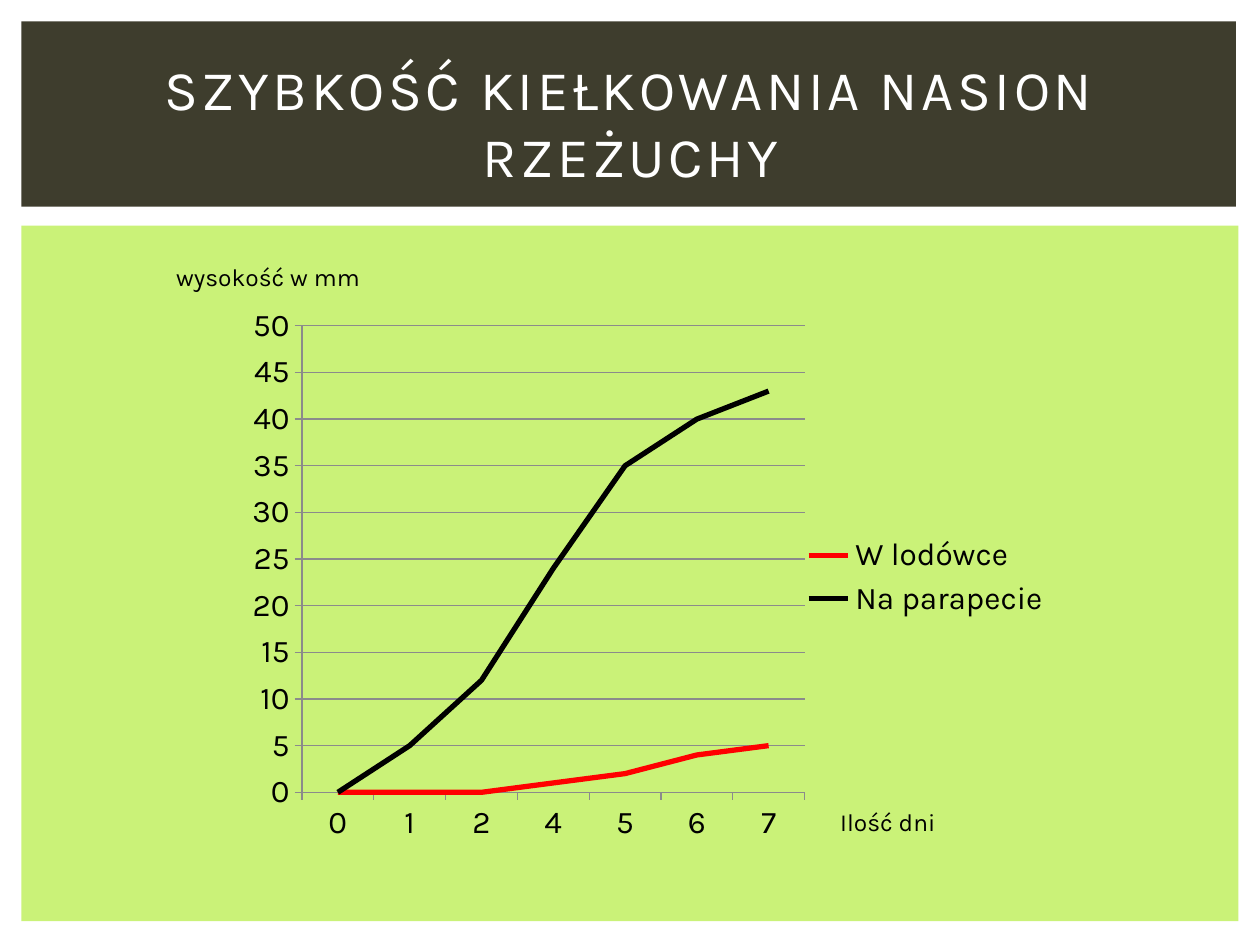
from dataclasses import dataclass

from lxml.etree import SubElement
from pptx import Presentation
from pptx.chart.data import CategoryChartData
from pptx.dml.color import RGBColor as RGB
from pptx.enum.chart import XL_CHART_TYPE as ChartType, XL_LEGEND_POSITION as LegendPos, XL_MARKER_STYLE as Marker
from pptx.enum.shapes import MSO_SHAPE as Shape
from pptx.enum.text import MSO_ANCHOR as Anchor, PP_ALIGN as Align
from pptx.oxml.ns import qn
from pptx.util import Inches, Pt


@dataclass(frozen=True)
class Theme:
    font: str = "Karla"
    ink: RGB = RGB(0, 0, 0)
    white: RGB = RGB(255, 255, 255)
    banner: RGB = RGB(0x3E, 0x3D, 0x2D)
    panel: RGB = RGB(0xCA, 0xF2, 0x78)
    grid: RGB = RGB(0x8B, 0x8B, 0x8B)
    red: RGB = RGB(255, 0, 0)
    title_size: int = 32
    chart_size: int = 18
    label_size: int = 14


@dataclass(frozen=True)
class Box:
    x: float
    y: float
    w: float
    h: float

    def inches(self) -> tuple:
        return tuple(Inches(v) for v in (self.x, self.y, self.w, self.h))


@dataclass(frozen=True)
class Panel:
    box: Box
    color: RGB


@dataclass(frozen=True)
class Label:
    text: str
    box: Box
    size: int
    color: RGB
    align: Align = Align.LEFT
    anchor: Anchor = Anchor.TOP
    spacing: int = 0
    wrap: bool = False


@dataclass(frozen=True)
class Growth:
    name: str
    heights: tuple
    color: RGB


T = Theme()
PANELS = (
    Panel(Box(0.17, 1.79, 9.66, 5.52), T.panel),
    Panel(Box(0.17, 0.17, 9.64, 1.47), T.banner),
)
TITLE = Label("SZYBKOŚĆ KIEŁKOWANIA NASION RZEŻUCHY", Box(0.42, 0.39, 9.17, 1.15),
              T.title_size, T.white, Align.CENTER, Anchor.MIDDLE, 200, True)
AXIS_LABELS = (
    Label("wysokość w mm", Box(1.3, 2.03, 1.73, 0.34), T.label_size, T.ink),
    Label("Ilość dni", Box(6.57, 6.36, 1.18, 0.34), T.label_size, T.ink),
)
DAYS = ("0", "1", "2", "4", "5", "6", "7")
SERIES = (
    Growth("W lodówce", (0, 0, 0, 1, 2, 4, 5), T.red),
    Growth("Na parapecie", (0, 5, 12, 24, 35, 40, 43), T.ink),
)
CHART_BOX = Box(1.77, 2.36, 6.67, 4.44)
PLOT = {"x": 0.094, "y": 0.051, "w": 0.598, "h": 0.834}


def add_panel(shapes, panel: Panel) -> None:
    sp = shapes.add_shape(Shape.RECTANGLE, *panel.box.inches())
    sp.shadow.inherit = False
    sp.fill.solid()
    sp.fill.fore_color.rgb = panel.color
    sp.line.fill.background()


def add_label(shapes, label: Label) -> None:
    tf = shapes.add_textbox(*label.box.inches()).text_frame
    tf.word_wrap = label.wrap
    tf.vertical_anchor = label.anchor
    p = tf.paragraphs[0]
    r = p.add_run()
    r.text = label.text
    p.alignment = label.align
    p.font.name = T.font
    p.font.size = Pt(label.size)
    p.font.color.rgb = label.color
    if label.spacing:
        r.font._element.set("spc", str(label.spacing))


def set_plot_layout(chart) -> None:
    area = chart._chartSpace.chart.plotArea
    for old in area.findall(qn("c:layout")):
        area.remove(old)
    layout = SubElement(area, qn("c:layout"))
    area.insert(0, layout)
    manual = SubElement(layout, qn("c:manualLayout"))
    settings = {"layoutTarget": "inner", "xMode": "edge", "yMode": "edge", **PLOT}
    for tag, value in settings.items():
        SubElement(manual, qn(f"c:{tag}")).set("val", str(value))


def add_growth_chart(shapes) -> None:
    data = CategoryChartData()
    data.categories = DAYS
    for s in SERIES:
        data.add_series(s.name, s.heights)
    chart = shapes.add_chart(ChartType.LINE, *CHART_BOX.inches(), data).chart
    chart.font.name = T.font
    chart.font.size = Pt(T.chart_size)
    chart.font.color.rgb = T.ink
    chart.has_title = False
    chart.has_legend = True
    chart.legend.position = LegendPos.RIGHT
    chart.legend.include_in_layout = False
    plot = chart.plots[0]
    plot.vary_by_categories = False
    for line, s in zip(plot.series, SERIES):
        line.smooth = False
        line.marker.style = Marker.NONE
        line.format.line.color.rgb = s.color
        line.format.line.width = Pt(3)
    axis = chart.value_axis
    axis.minimum_scale, axis.maximum_scale, axis.major_unit = 0, 50, 5
    axis.has_major_gridlines = True
    for part in (axis, chart.category_axis, axis.major_gridlines):
        part.format.line.color.rgb = T.grid
        part.format.line.width = Pt(0.75)
    set_plot_layout(chart)


def main() -> None:
    """Build the cress germination slide."""
    prs = Presentation()
    prs.slide_width, prs.slide_height = Inches(10), Inches(7.5)
    shapes = prs.slides.add_slide(prs.slide_layouts[6]).shapes
    for panel in PANELS:
        add_panel(shapes, panel)
    add_label(shapes, TITLE)
    add_growth_chart(shapes)
    for label in AXIS_LABELS:
        add_label(shapes, label)
    prs.save("out.pptx")


if __name__ == "__main__":
    main()
